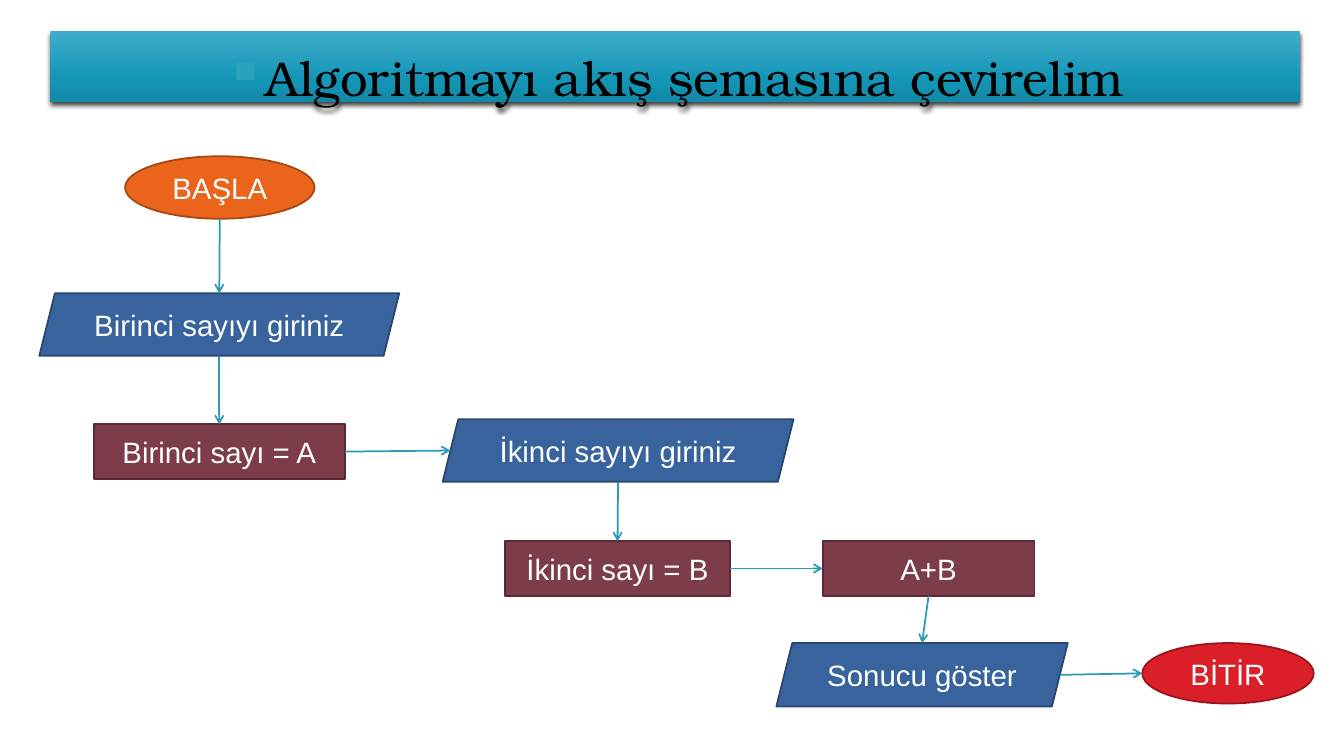
from lxml import etree
from pptx import Presentation
from pptx.dml.color import RGBColor
from pptx.enum.shapes import MSO_CONNECTOR, MSO_SHAPE
from pptx.enum.text import MSO_ANCHOR, PP_ALIGN
from pptx.oxml import parse_xml
from pptx.oxml.ns import nsdecls, qn
from pptx.util import Inches, Pt

BLACK = RGBColor(0x00, 0x00, 0x00)
WHITE = RGBColor(0xFF, 0xFF, 0xFF)
ARROW = RGBColor(0x2B, 0x9B, 0xB6)
ORANGE, ORANGE_EDGE = RGBColor(0xEB, 0x64, 0x1B), RGBColor(0xA6, 0x47, 0x13)
RED, RED_EDGE = RGBColor(0xDA, 0x1F, 0x28), RGBColor(0x9A, 0x16, 0x1D)
BLUE, BLUE_EDGE = RGBColor(0x39, 0x63, 0x9D), RGBColor(0x28, 0x46, 0x6F)
PLUM, PLUM_EDGE = RGBColor(0x7D, 0x3C, 0x4A), RGBColor(0x58, 0x2A, 0x35)
BAND_STOPS = [(0, "3FACCA"), (69, "1495B6"), (100, "1289A6")]

TITLE = "Algoritmayı akış şemasına çevirelim"
TITLE_BOX = (0.5, 0.31, 12.39, 0.7)

STYLES = {
    "start": (MSO_SHAPE.OVAL, ORANGE, ORANGE_EDGE),
    "end": (MSO_SHAPE.OVAL, RED, RED_EDGE),
    "data": (MSO_SHAPE.PARALLELOGRAM, BLUE, BLUE_EDGE),
    "process": (MSO_SHAPE.RECTANGLE, PLUM, PLUM_EDGE),
}
# In the order of the flow: text, style, (left, top, width, height)
STEPS = [
    ("BAŞLA", "start", (1.24, 1.55, 1.88, 0.62)),
    ("Birinci sayıyı giriniz", "data", (0.39, 2.91, 3.57, 0.62)),
    ("Birinci sayı = A", "process", (0.93, 4.21, 2.49, 0.54)),
    ("İkinci sayıyı giriniz", "data", (4.39, 4.16, 3.48, 0.62)),
    ("İkinci sayı = B", "process", (5.01, 5.37, 2.23, 0.54)),
    ("A+B", "process", (8.16, 5.37, 2.1, 0.54)),
    ("Sonucu göster", "data", (7.7, 6.38, 2.89, 0.63)),
    ("BİTİR", "end", (11.33, 6.38, 1.7, 0.6)),
]
# How the flow leaves each step for the next one
DIRECTIONS = ["down", "down", "right", "down", "right", "down", "right"]
SITES = {"top": 0, "left": 1, "bottom": 2, "right": 3}
SLANT = 0.125  # inset of a parallelogram's side at mid-height, per height


def write_text(shape, text, font="Arial", size=21, color=WHITE,
               anchor=MSO_ANCHOR.MIDDLE, margins=(0.13, 0.07)):
    frame = shape.text_frame
    frame.word_wrap = True
    frame.vertical_anchor = anchor
    frame.margin_left = frame.margin_right = Inches(margins[0])
    frame.margin_top = frame.margin_bottom = Inches(margins[1])
    paragraph = frame.paragraphs[0]
    paragraph.alignment = PP_ALIGN.CENTER
    run = paragraph.add_run()
    run.text = text
    run.font.name = font
    run.font.size = Pt(size)
    run.font.color.rgb = color
    return paragraph


def add_box(slide, preset, box):
    shape = slide.shapes.add_shape(preset, *map(Inches, box))
    shape.shadow.inherit = False
    return shape


def add_title(slide):
    band = add_box(slide, MSO_SHAPE.RECTANGLE, TITLE_BOX)
    band.line.fill.background()
    properties = band._element.spPr
    stops = "".join(f'<a:gs pos="{pos * 1000}"><a:srgbClr val="{color}"/></a:gs>'
                    for pos, color in BAND_STOPS)
    properties.find(qn("a:prstGeom")).addnext(parse_xml(
        f'<a:gradFill {nsdecls("a")} rotWithShape="1"><a:gsLst>{stops}</a:gsLst>'
        '<a:lin ang="5400000" scaled="0"/></a:gradFill>'))
    properties.find(qn("a:effectLst")).append(parse_xml(
        f'<a:outerShdw {nsdecls("a")} blurRad="{Pt(3)}" dist="{Pt(2)}" dir="5400000" '
        'rotWithShape="0"><a:srgbClr val="000000"><a:alpha val="75000"/></a:srgbClr>'
        '</a:outerShdw>'))

    paragraph = write_text(band, TITLE, font="TeX Gyre Bonum", size=35, color=BLACK,
                           anchor=MSO_ANCHOR.TOP, margins=(0.1, 0.05))
    paragraph.line_spacing = 1.2
    paragraph.space_before = Pt(10)
    layout = paragraph._p.get_or_add_pPr()
    layout.set("marL", str(Inches(0.25)))
    layout.set("indent", str(Inches(-0.25)))
    bullet_color = etree.SubElement(layout, qn("a:buClr"))
    etree.SubElement(bullet_color, qn("a:srgbClr"), val="2DA2BF")
    etree.SubElement(layout, qn("a:buSzPct"), val="110000")
    etree.SubElement(layout, qn("a:buChar"), char="▪")


def side_middle(step, side):
    _, style, (left, top, width, height) = step
    inset = SLANT * height if style == "data" else 0
    return {
        "top": (left + width / 2, top),
        "bottom": (left + width / 2, top + height),
        "left": (left + inset, top + height / 2),
        "right": (left + width - inset, top + height / 2),
    }[side]


def add_arrow(slide, source, target, direction, source_shape, target_shape):
    leave, enter = ("bottom", "top") if direction == "down" else ("right", "left")
    ends = side_middle(source, leave) + side_middle(target, enter)
    arrow = slide.shapes.add_connector(MSO_CONNECTOR.STRAIGHT, *map(Inches, ends))
    if source[1] == "process":
        arrow.begin_connect(source_shape, SITES[leave])
    if target[1] == "process":
        arrow.end_connect(target_shape, SITES[enter])
    arrow.line.color.rgb = ARROW
    arrow.line.width = Pt(1.25)
    etree.SubElement(arrow.line._get_or_add_ln(), qn("a:tailEnd"), type="arrow")
    etree.SubElement(arrow._element.spPr, qn("a:effectLst"))


def main():
    prs = Presentation()
    prs.slide_width, prs.slide_height = Inches(13.33), Inches(7.5)
    slide = prs.slides.add_slide(prs.slide_layouts[6])
    add_title(slide)

    step_shapes = []
    for text, style, box in STEPS:
        preset, fill, edge = STYLES[style]
        shape = add_box(slide, preset, box)
        shape.fill.solid()
        shape.fill.fore_color.rgb = fill
        shape.line.color.rgb = edge
        shape.line.width = Pt(1.25)
        write_text(shape, text)
        step_shapes.append(shape)

    for i, direction in enumerate(DIRECTIONS):
        add_arrow(slide, STEPS[i], STEPS[i + 1], direction,
                  step_shapes[i], step_shapes[i + 1])
    prs.save("out.pptx")


if __name__ == "__main__":
    main()
